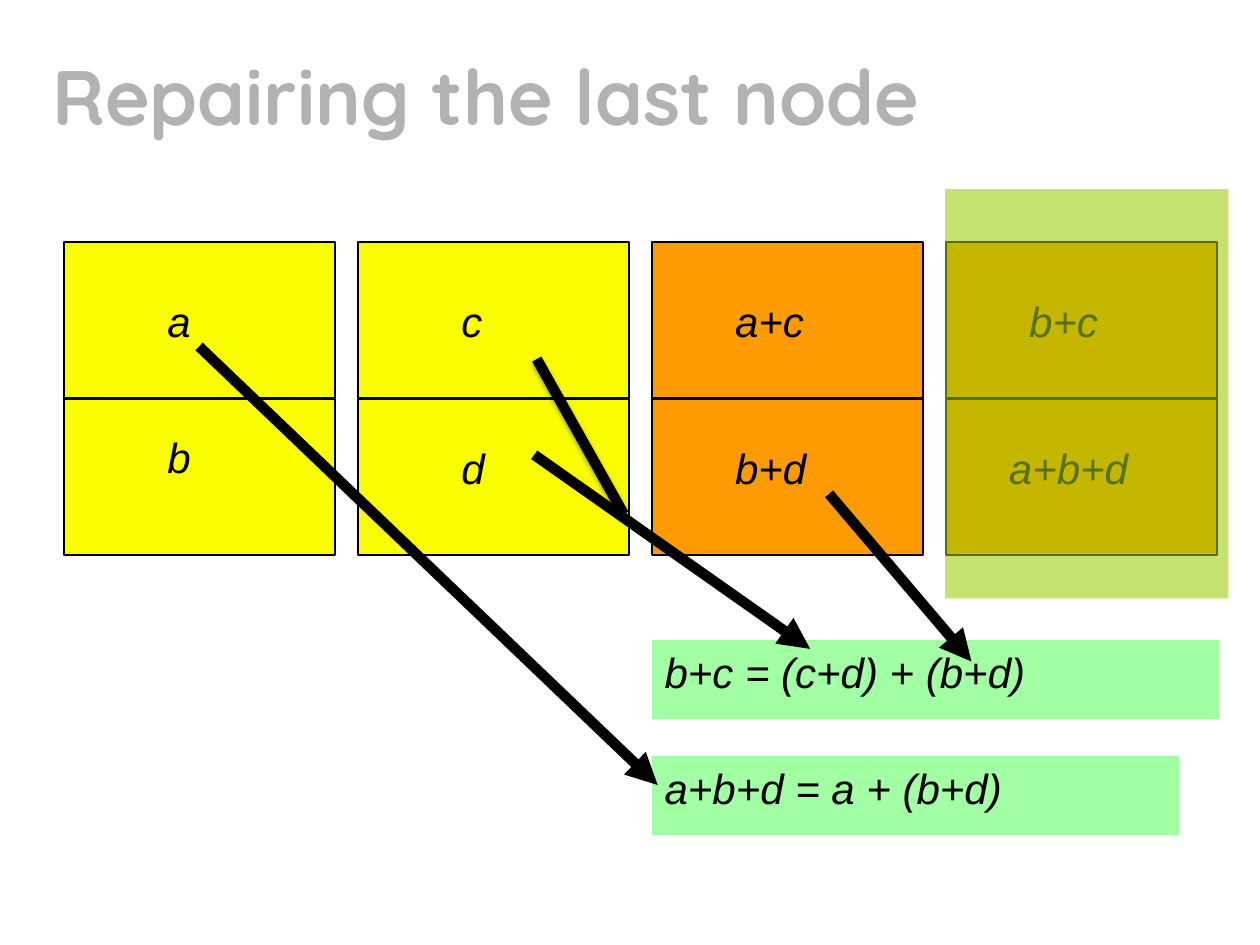
import pptx
import pptx.util
import pptx.dml.color
import pptx.enum.shapes
import pptx.enum.text
import pptx.oxml
import pptx.oxml.ns

RGB = pptx.dml.color.RGBColor
BLACK = RGB(0x00, 0x00, 0x00)
GREY = RGB(0xB2, 0xB2, 0xB2)
YELLOW = RGB(0xFA, 0xFD, 0x00)
ORANGE = RGB(0xFE, 0x9B, 0x03)
GREEN = RGB(0xA2, 0xFF, 0xA3)
OLIVE = RGB(0x99, 0xCC, 0x00)
RECT = pptx.enum.shapes.MSO_SHAPE.RECTANGLE
NS = pptx.oxml.ns.nsdecls("a")

# Content: one entry per node: fill, then (text, shift from cell corner, width)
TITLE = "Repairing the last node"
NODES = [
    (YELLOW, [("a", 0.72, 0.38, 0.43), ("b", 0.72, 0.21, 0.43)]),
    (YELLOW, [("c", 0.72, 0.38, 0.43), ("d", 0.72, 0.3, 0.43)]),
    (ORANGE, [("a+c", 0.56, 0.38, 0.97), ("b+d", 0.56, 0.3, 0.97)]),
    (ORANGE, [("b+c", 0.56, 0.38, 0.97), ("a+b+d", 0.4, 0.3, 1.55)]),
]
SUMS = [("b+c = (c+d) + (b+d)", 5.08, 4.5), ("a+b+d = a + (b+d)", 6, 4.18)]
# Start, end, has arrowhead
LINES = [
    ((6.58, 3.92), (7.71, 5.25), True),
    ((4.24, 3.61), (6.43, 5.15), True),
    ((1.58, 2.75), (5.22, 6.23), True),
    ((4.26, 2.85), (4.95, 4.08), False),
]

# Grid and formats
LEFT, TOP = 0.51, 1.92
STEP, DROP = 2.333, 1.245
WIDE, HIGH = 2.15, 1.24
TALL = 0.63
BODY = {"name": "Arial", "size": pptx.util.Pt(24), "italic": True}
HEAD = {"name": "Quicksand", "size": pptx.util.Pt(44), "bold": True}
SHADE = (f'<a:effectLst {NS}><a:outerShdw blurRad="39370" dist="20320" '
         'dir="5400000" rotWithShape="0"><a:srgbClr val="000000">'
         '<a:alpha val="38000"/></a:srgbClr></a:outerShdw></a:effectLst>')

deck = pptx.Presentation()
deck.slide_width = pptx.util.Inches(10)
deck.slide_height = pptx.util.Inches(7.5)
slide = deck.slides.add_slide(deck.slide_layouts[6])


def inch(*sizes):
    return [pptx.util.Inches(size) for size in sizes]


def add_rect(box, fill, edge=False):
    shape = slide.shapes.add_shape(RECT, *inch(*box))
    shape.shadow.inherit = False
    shape.fill.solid()
    shape.fill.fore_color.rgb = fill
    if edge:
        shape.line.color.rgb = BLACK
        shape.line.width = pptx.util.Pt(1)
    else:
        shape.line.fill.background()
    return shape


def write(shape, text, style, color=BLACK, anchor="TOP"):
    frame = shape.text_frame
    frame.word_wrap = True
    frame.vertical_anchor = getattr(pptx.enum.text.MSO_ANCHOR, anchor)
    para = frame.paragraphs[0]
    para.alignment = pptx.enum.text.PP_ALIGN.LEFT
    run = para.add_run()
    run.text = text
    for key, value in style.items():
        setattr(run.font, key, value)
    run.font.color.rgb = color


# Title
title = slide.shapes.add_textbox(*inch(0.32, 0.42, 9.35, 0.67))
write(title, TITLE, HEAD, GREY, "MIDDLE")

# Nodes: a column each, two cells high
for col, (fill, cells) in enumerate(NODES):
    for row, (text, right, down, width) in enumerate(cells):
        x, y = LEFT + col * STEP, TOP + row * DROP
        add_rect((x, y, WIDE, HIGH), fill, True)
        label = slide.shapes.add_textbox(*inch(x + right, y + down, width, TALL))
        write(label, text, BODY)

# Veil over the lost node
veil = add_rect((7.5, 1.5, 2.25, 3.25), OLIVE)
tint = veil.fill._xPr.find(".//" + pptx.oxml.ns.qn("a:srgbClr"))
tint.append(pptx.oxml.parse_xml(f'<a:alpha {NS} val="56000"/>'))

# Repair sums
for text, y, width in SUMS:
    write(add_rect((LEFT + 2 * STEP, y, width, TALL), GREEN), text, BODY)

# Lines from the live nodes to the sums
for start, end, arrow in LINES:
    line = slide.shapes.add_connector(
        pptx.enum.shapes.MSO_CONNECTOR.STRAIGHT, *inch(*start, *end))
    line.line.color.rgb = BLACK
    line.line.width = pptx.util.Pt(6)
    if arrow:
        line.line._get_or_add_ln().append(
            pptx.oxml.parse_xml(f'<a:tailEnd {NS} type="triangle"/>'))
    effect = f"<a:effectLst {NS}/>" if arrow else SHADE
    line._element.spPr.append(pptx.oxml.parse_xml(effect))

deck.save("out.pptx")
